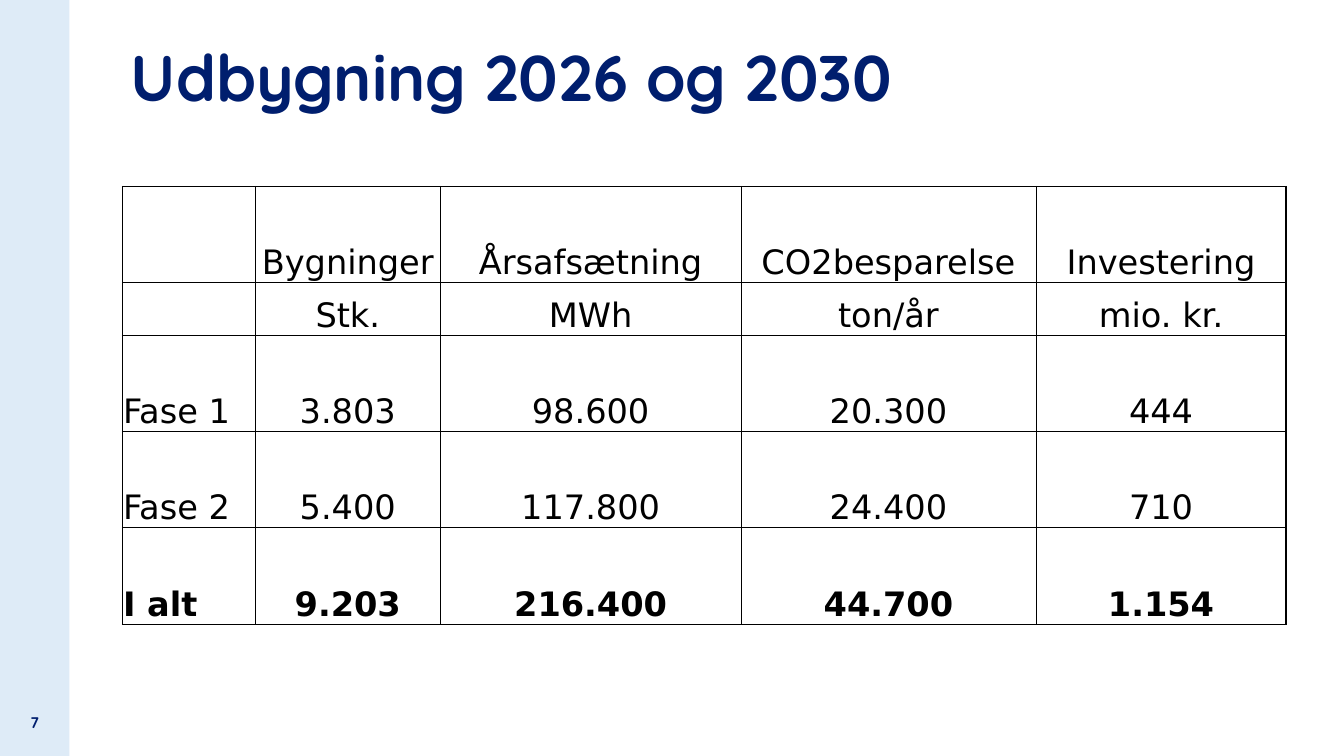
from dataclasses import dataclass

from lxml import etree
from pptx import Presentation
from pptx import util as u
from pptx.dml.color import RGBColor
from pptx.enum import shapes, text
from pptx.oxml import ns


@dataclass(frozen=True)
class Theme:
    navy: str = "001E6E"
    strip: str = "DEEBF7"
    black: str = "000000"
    heading_font: str = "Quicksand"
    table_font: str = "DejaVu Sans"
    title_size: int = 46
    table_size: int = 24
    number_size: int = 11
    thin: float = 0.5
    thick: float = 1


THEME = Theme()

COLUMN_WIDTHS = [3.35, 4.67, 7.57, 7.44, 6.3]
ROW_HEIGHTS = [2.41, 1.35, 2.41, 2.41, 2.46]
EXPANSION = [
    ["", "Bygninger", "Årsafsætning", "CO2besparelse", "Investering"],
    ["", "Stk.", "MWh", "ton/år", "mio. kr."],
    ["Fase 1", "3.803", "98.600", "20.300", "444"],
    ["Fase 2", "5.400", "117.800", "24.400", "710"],
    ["I alt", "9.203", "216.400", "44.700", "1.154"],
]


def write(frame, words, *, size, font, color, bold=False,
          align=text.PP_ALIGN.LEFT, spacing=None):
    """Put formatted words in the first paragraph of a text frame."""
    paragraph = frame.paragraphs[0]
    paragraph.alignment = align
    if spacing:
        paragraph.line_spacing = spacing
    run = paragraph.add_run()
    run.text = words
    run.font.size = u.Pt(size)
    run.font.name = font
    run.font.bold = bold
    run.font.color.rgb = RGBColor.from_string(color)


def add_strip(slide, width, height):
    strip = slide.shapes.add_shape(
        shapes.MSO_SHAPE.RECTANGLE, 0, 0, width, height)
    strip.shadow.inherit = False
    strip.fill.solid()
    strip.fill.fore_color.rgb = RGBColor.from_string(THEME.strip)
    strip.line.fill.background()


def add_heading(slide, words, box, anchor=text.MSO_ANCHOR.TOP, **style):
    frame = slide.shapes.add_textbox(*map(u.Cm, box)).text_frame
    frame.word_wrap = True
    frame.vertical_anchor = anchor
    write(frame, words, font=THEME.heading_font, color=THEME.navy,
          bold=True, **style)


def set_borders(cell, widths):
    """Draw cell borders from a mapping of side (L, R, T, B) to points."""
    properties = cell._tc.get_or_add_tcPr()
    for side, points in widths.items():
        line = etree.SubElement(properties, ns.qn(f"a:ln{side}"),
                                w=str(u.Pt(points)))
        fill = etree.SubElement(line, ns.qn("a:solidFill"))
        etree.SubElement(fill, ns.qn("a:srgbClr"), val=THEME.black)


def add_expansion_table(slide, left, top):
    last_row, last_column = len(ROW_HEIGHTS) - 1, len(COLUMN_WIDTHS) - 1
    table = slide.shapes.add_table(
        len(ROW_HEIGHTS), len(COLUMN_WIDTHS), u.Cm(left), u.Cm(top),
        u.Cm(sum(COLUMN_WIDTHS)), u.Cm(sum(ROW_HEIGHTS))).table
    table.first_row = table.horz_banding = False
    for column, width in zip(table.columns, COLUMN_WIDTHS):
        column.width = u.Cm(width)
    for row, height in zip(table.rows, ROW_HEIGHTS):
        row.height = u.Cm(height)

    for r, values in enumerate(EXPANSION):
        for c, value in enumerate(values):
            cell = table.cell(r, c)
            cell.margin_left = cell.margin_right = cell.margin_top = u.Cm(0.02)
            cell.margin_bottom = 0
            cell.vertical_anchor = text.MSO_ANCHOR.BOTTOM
            set_borders(cell, {
                "L": THEME.thin,
                "R": THEME.thick if c == last_column else THEME.thin,
                "T": THEME.thick if r == 0 else THEME.thin,
                "B": THEME.thick if r == last_row else THEME.thin,
            })
            cell.fill.background()
            if value:
                write(cell.text_frame, value, size=THEME.table_size,
                      font=THEME.table_font, color=THEME.black,
                      bold=r == last_row,
                      align=text.PP_ALIGN.CENTER if c else text.PP_ALIGN.LEFT)


def main():
    deck = Presentation()
    deck.slide_width, deck.slide_height = u.Cm(33.87), u.Cm(19.05)
    slide = deck.slides.add_slide(deck.slide_layouts[6])

    # Side strip with the slide number
    add_strip(slide, u.Cm(1.75), deck.slide_height)
    add_heading(slide, "7", (0, 17.35, 1.75, 1.7), text.MSO_ANCHOR.MIDDLE,
                size=THEME.number_size, align=text.PP_ALIGN.CENTER)

    # Title and table
    add_heading(slide, "Udbygning 2026 og 2030", (3.05, 1.04, 29.36, 3.66),
                size=THEME.title_size, spacing=0.9)
    add_expansion_table(slide, 3.08, 4.7)

    deck.save("out.pptx")


if __name__ == "__main__":
    main()
